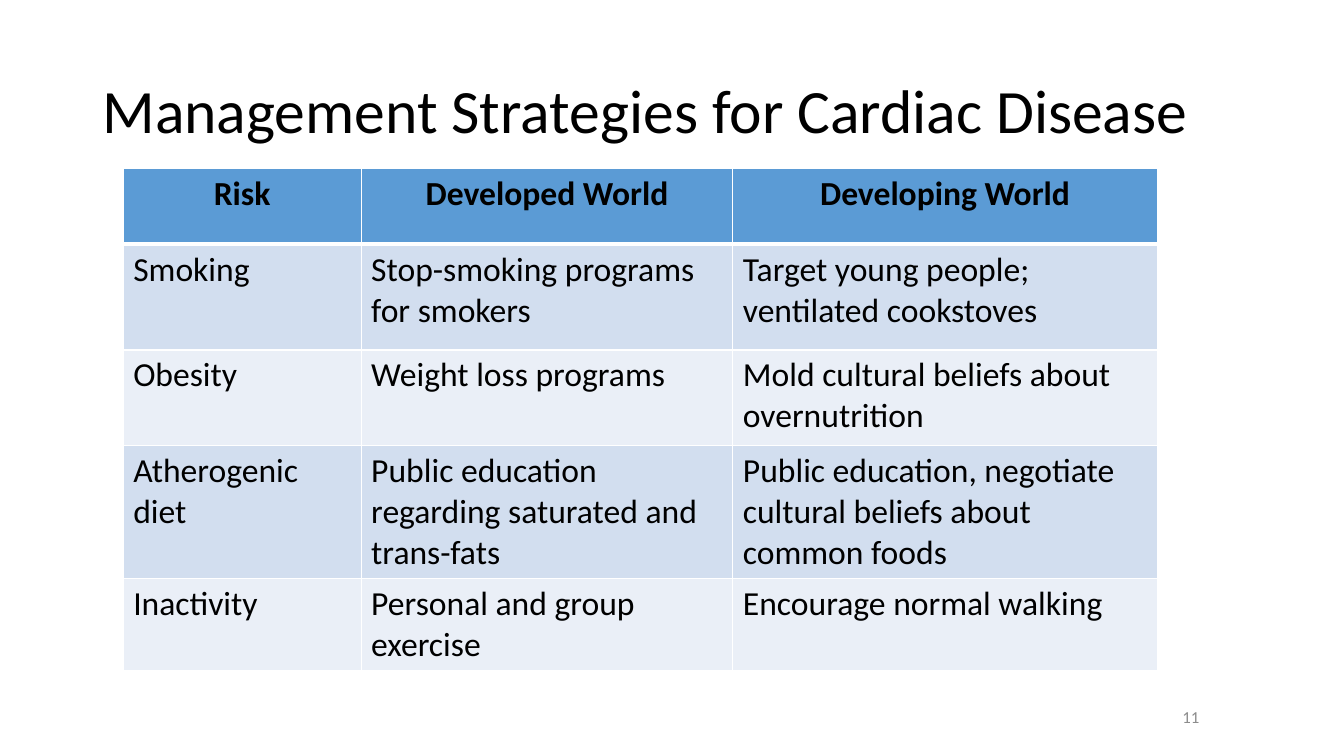
from lxml import etree
from pptx import Presentation
from pptx.dml.color import RGBColor
from pptx.enum import text
from pptx.oxml.ns import qn
from pptx.util import Pt

HEADER_FILL = "5B9BD5"
BAND_FILLS = ("D2DEEF", "EAEFF7")
COL_WIDTHS = (170, 265.5, 303.2)
ROW_HEIGHTS = (54, 75.6, 68.4, 95, 65.5)
STRATEGIES = (
    ("Risk", "Developed World", "Developing World"),
    ("Smoking", "Stop-smoking programs for smokers",
     "Target young people; ventilated cookstoves"),
    ("Obesity", "Weight loss programs",
     "Mold cultural beliefs about overnutrition"),
    ("Atherogenic diet", "Public education regarding saturated and trans-fats",
     "Public education, negotiate cultural beliefs about common foods"),
    ("Inactivity", "Personal and group exercise", "Encourage normal walking"),
)


def color(value):
    return RGBColor.from_string(value)


def write(tf, content, size=24, fill="000000", bold=False,
          align=text.PP_ALIGN.LEFT, spacing=1.0):
    p = tf.paragraphs[0]
    p.alignment = align
    p.line_spacing = spacing
    r = p.add_run()
    r.text = content
    r.font.name = "Calibri"
    r.font.size = Pt(size)
    r.font.bold = bold
    r.font.color.rgb = color(fill)


def set_borders(cell, widths, line="FFFFFF"):
    """Widths are in points: left, right, top, bottom."""
    tc_pr = cell._tc.get_or_add_tcPr()
    for i, (side, width) in enumerate(zip("LRTB", widths)):
        ln = etree.Element(qn(f"a:ln{side}"), w=str(Pt(width)))
        solid = etree.SubElement(ln, qn("a:solidFill"))
        etree.SubElement(solid, qn("a:srgbClr"), val=line)
        tc_pr.insert(i, ln)


# Title
def add_title(s, x, y, w, h):
    sp = s.shapes.title
    sp.left, sp.top, sp.width, sp.height = map(Pt, (x, y, w, h))
    tf = sp.text_frame
    tf.word_wrap = True
    tf.auto_size = text.MSO_AUTO_SIZE.NONE
    tf.vertical_anchor = text.MSO_ANCHOR.MIDDLE
    write(tf, "Management Strategies for Cardiac Disease", size=44, spacing=0.9)


# Strategy table
def add_strategies(s, x, y):
    frame = s.shapes.add_table(
        len(STRATEGIES), len(COL_WIDTHS), Pt(x), Pt(y),
        Pt(sum(COL_WIDTHS)), Pt(sum(ROW_HEIGHTS)))
    tbl = frame.table
    for col, width in zip(tbl.columns, COL_WIDTHS):
        col.width = Pt(width)
    for i, (row, height, contents) in enumerate(
            zip(tbl.rows, ROW_HEIGHTS, STRATEGIES)):
        row.height = Pt(height)
        header = i == 0
        for cell, content in zip(row.cells, contents):
            cell.fill.solid()
            cell.fill.fore_color.rgb = color(
                HEADER_FILL if header else BAND_FILLS[(i - 1) % 2])
            set_borders(cell, (1, 1, 3 if i == 1 else 1, 3 if header else 1))
            write(cell.text_frame, content, bold=header,
                  align=text.PP_ALIGN.CENTER if header else text.PP_ALIGN.LEFT)


# Slide number
def add_number(s, x, y, w, h):
    tf = s.shapes.add_textbox(*map(Pt, (x, y, w, h))).text_frame
    tf.word_wrap = True
    tf.vertical_anchor = text.MSO_ANCHOR.MIDDLE
    write(tf, "11", size=12, fill="8C8C8C")


def main():
    prs = Presentation()
    prs.slide_width, prs.slide_height = Pt(960), Pt(540)
    s = prs.slides.add_slide(prs.slide_layouts[5])
    add_title(s, 66, 28.8, 828, 104.4)
    add_strategies(s, 88, 120.4)
    add_number(s, 837.5, 497.5, 56, 28.8)
    prs.save("out.pptx")


if __name__ == "__main__":
    main()
